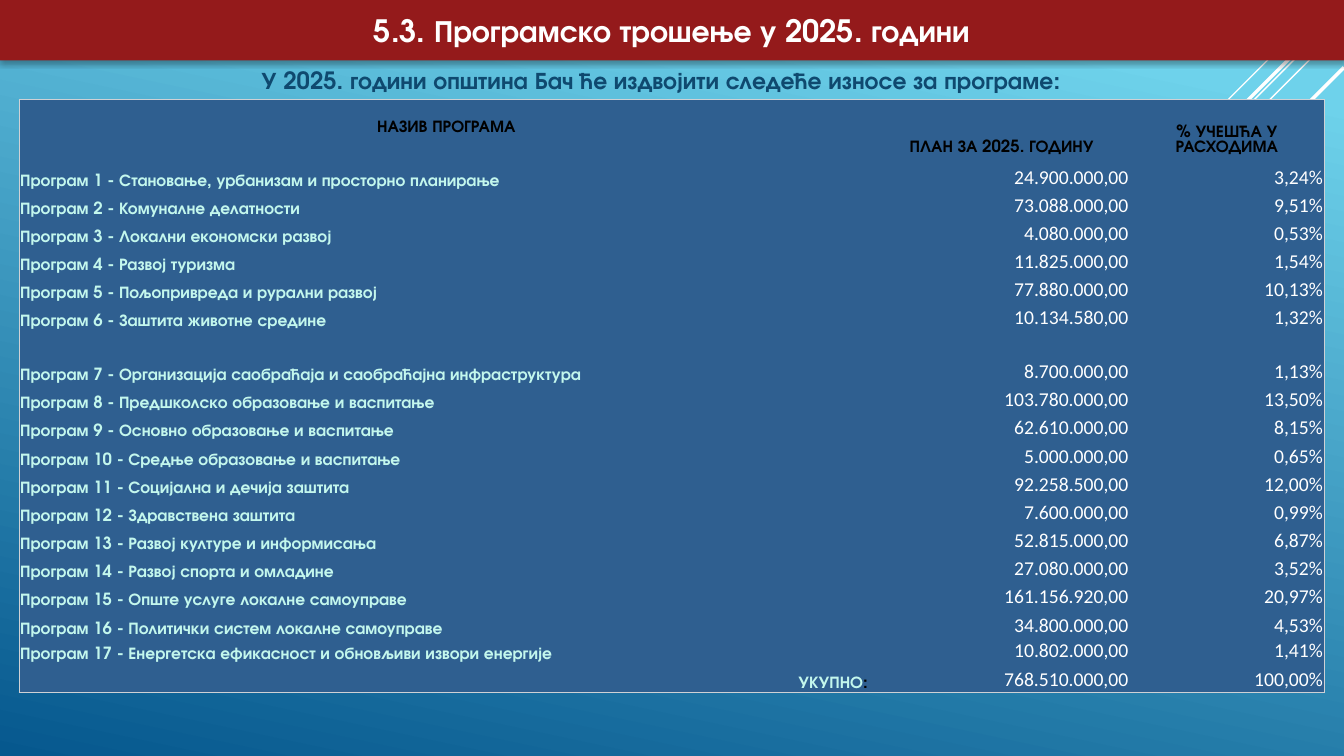
import pptx
import pptx.util
import pptx.dml.color
import pptx.enum.dml
import pptx.enum.shapes
import pptx.enum.text
import pptx.oxml
from pptx.oxml.ns import nsdecls, qn

Cm = pptx.util.Cm
Pt = pptx.util.Pt
ALIGN = pptx.enum.text.PP_ALIGN
ANCHOR = pptx.enum.text.MSO_ANCHOR

COLORS = {
    "sky": "6ED2EB", "sea": "06588E", "white": "FFFFFF", "black": "000000",
    "banner": "941A1B", "subtitle": "0F496F", "table": "2F5F90",
    "mint": "C3F7ED", "border": "CFD1D5",
}
HEAD_FONT = "TeX Gyre Adventor"
FORMATS = {
    "title": {"size": Pt(22), "name": HEAD_FONT, "bold": True, "color": "white"},
    "subtitle": {"size": Pt(17), "name": HEAD_FONT, "bold": True, "color": "subtitle"},
    "header": {"size": Pt(12), "name": HEAD_FONT, "bold": True, "color": "black"},
    "program": {"size": Pt(12), "name": HEAD_FONT, "bold": True, "color": "mint"},
    "value": {"size": Pt(14), "name": "Calibri", "bold": False, "color": "white"},
}
HEADERS = ["НАЗИВ ПРОГРАМА", "ПЛАН ЗА 2025. ГОДИНУ", "% УЧЕШЋА У РАСХОДИМА"]
PROGRAMS = [
    ("Становање, урбанизам и просторно планирање", "24.900.000,00", "3,24%"),
    ("Комуналне делатности", "73.088.000,00", "9,51%"),
    ("Локални економски развој", "4.080.000,00", "0,53%"),
    ("Развој туризма", "11.825.000,00", "1,54%"),
    ("Пољопривреда и рурални развој", "77.880.000,00", "10,13%"),
    ("Заштита животне средине", "10.134.580,00", "1,32%"),
    ("Организација саобраћаја и саобраћајна инфраструктура", "8.700.000,00", "1,13%"),
    ("Предшколско образовање и васпитање", "103.780.000,00", "13,50%"),
    ("Основно образовање и васпитање", "62.610.000,00", "8,15%"),
    ("Средње образовање и васпитање", "5.000.000,00", "0,65%"),
    ("Социјална и дечија заштита", "92.258.500,00", "12,00%"),
    ("Здравствена заштита", "7.600.000,00", "0,99%"),
    ("Развој културе и информисања", "52.815.000,00", "6,87%"),
    ("Развој спорта и омладине", "27.080.000,00", "3,52%"),
    ("Опште услуге локалне самоуправе", "161.156.920,00", "20,97%"),
    ("Политички систем локалне самоуправе", "34.800.000,00", "4,53%"),
    ("Енергетска ефикасност и обновљиви извори енергије", "10.802.000,00", "1,41%"),
]
TOTAL = ("УКУПНО", "768.510.000,00", "100,00%")
COL_WIDTHS = [21.54, 6.45, 4.9]
ROW_HEIGHTS = [1.42, 0.84] + [0.71] * 5 + [1.35] + [0.71] * 9 + [0.64, 0.74]
STREAKS = [(33.43, 0.03, 10.57, 1), (33.87, 0.25, 16.89, 1), (33.87, 0.64, 13.77, 1),
           (33.87, 0.1, 13.49, 2.5), (33.87, 1.7, 12.07, 2.5)]


def rgb(name):
    return pptx.dml.color.RGBColor.from_string(COLORS[name])


def add_run(p, text, style, **changes):
    r = p.add_run()
    r.text = text
    for key, value in {**FORMATS[style], **changes}.items():
        if key == "color":
            r.font.color.rgb = rgb(value)
        else:
            setattr(r.font, key, value)


def place(sp, x, y, w, h):
    for key, value in {"left": x, "top": y, "width": w, "height": h}.items():
        setattr(sp, key, Cm(value))


def fill_placeholder(sp, box, text, style, anchor):
    place(sp, *box)
    tf = sp.text_frame
    for key, value in {"word_wrap": True, "vertical_anchor": anchor,
                       "auto_size": pptx.enum.text.MSO_AUTO_SIZE.NONE}.items():
        setattr(tf, key, value)
    p = tf.paragraphs[0]
    for key, value in {"alignment": ALIGN.CENTER, "space_before": Pt(0),
                       "line_spacing": 1.0}.items():
        setattr(p, key, value)
    add_run(p, text, style)


def paint_background(s):
    fill = s.background.fill
    fill.gradient()
    fill.gradient_angle = 258
    for stop, name, position in zip(fill.gradient_stops, ("sky", "sea"), (0.1, 1)):
        stop.color.rgb = rgb(name)
        stop.position = position


def add_streaks(s):
    for x, y, run, width in STREAKS:
        line = s.shapes.add_connector(pptx.enum.shapes.MSO_CONNECTOR.STRAIGHT,
                                      Cm(x), Cm(y), Cm(x - run), Cm(y + run))
        line.line.color.rgb = rgb("white")
        line.line.width = Pt(width)
        line._element.spPr.append(pptx.oxml.parse_xml(f'<a:effectLst {nsdecls("a")}/>'))


def add_banner(s, box):
    sp = s.shapes.title
    s.shapes._spTree.append(sp._element)
    fill_placeholder(sp, box, "5.3. Програмско трошење у 2025. години", "title", ANCHOR.MIDDLE)
    spPr = sp._element.spPr
    spPr.append(pptx.oxml.parse_xml(
        f'<a:prstGeom {nsdecls("a")} prst="roundRect"><a:avLst/></a:prstGeom>'))
    sp.fill.solid()
    sp.fill.fore_color.rgb = rgb("banner")
    spPr.append(pptx.oxml.parse_xml(
        f'<a:effectLst {nsdecls("a")}><a:outerShdw blurRad="{Pt(3.5)}" dist="{Pt(2.2)}" '
        f'dir="5400000" rotWithShape="0"><a:srgbClr val="{COLORS["black"]}">'
        '<a:alpha val="32000"/></a:srgbClr></a:outerShdw></a:effectLst>'))


def add_subtitle(s, box):
    sp = s.placeholders[1]
    s.shapes._spTree.append(sp._element)
    fill_placeholder(sp, box, "У 2025. години општина Бач ће издвојити следеће износе за програме:",
                     "subtitle", ANCHOR.TOP)


def set_borders(cell, outer):
    tcPr = cell._tc.get_or_add_tcPr()
    for i, (tag, shown) in enumerate(zip(("lnL", "lnR", "lnT", "lnB"), outer)):
        paint = (f'<a:solidFill><a:srgbClr val="{COLORS["border"]}"><a:alpha val="60000"/>'
                 '</a:srgbClr></a:solidFill>') if shown else '<a:noFill/>'
        tcPr.insert(i, pptx.oxml.parse_xml(
            f'<a:{tag} {nsdecls("a")} w="{Pt(0.75)}">{paint}</a:{tag}>'))


def format_cell(cell, anchor, align):
    for key, value in {"margin_left": Cm(0.03), "margin_right": Cm(0.03),
                       "margin_top": Cm(0.03), "margin_bottom": 0,
                       "vertical_anchor": anchor}.items():
        setattr(cell, key, value)
    cell.fill.solid()
    cell.fill.fore_color.rgb = rgb("table")
    p = cell.text_frame.paragraphs[0]
    p.alignment = align
    return p


def add_program_table(s, x, y):
    rows = [HEADERS]
    rows += [(f"Програм {n} - {name}", plan, share)
             for n, (name, plan, share) in enumerate(PROGRAMS, 1)]
    rows.append(TOTAL)
    last_row, last_col = len(rows) - 1, len(HEADERS) - 1
    table = s.shapes.add_table(len(rows), len(HEADERS), Cm(x), Cm(y),
                               Cm(sum(COL_WIDTHS)), Cm(sum(ROW_HEIGHTS))).table
    table.first_row = table.horz_banding = False
    for col, width in zip(table.columns, COL_WIDTHS):
        col.width = Cm(width)
    for i, (row, height) in enumerate(zip(rows, ROW_HEIGHTS)):
        table.rows[i].height = Cm(height)
        for j, text in enumerate(row):
            cell = table.cell(i, j)
            if i == 0:
                style, align = "header", ALIGN.CENTER
            elif j == 0:
                style, align = "program", ALIGN.RIGHT if i == last_row else ALIGN.LEFT
            else:
                style, align = "value", ALIGN.RIGHT
            anchor = ANCHOR.MIDDLE if i == j == 0 else ANCHOR.BOTTOM
            p = format_cell(cell, anchor, align)
            add_run(p, text, style)
            if i == last_row and j == 0:
                add_run(p, ": ", style, color="black")
            set_borders(cell, (j == 0, j == last_col, i == 0, i == last_row))


def main():
    prs = pptx.Presentation()
    prs.slide_width, prs.slide_height = Cm(33.87), Cm(19.05)
    s = prs.slides.add_slide(prs.slide_layouts[0])
    paint_background(s)
    add_streaks(s)
    add_subtitle(s, (4.27, 1.52, 24.77, 1.4))
    add_banner(s, (0, 0, 33.87, 1.52))
    add_program_table(s, 0.48, 2.51)
    prs.save("out.pptx")


if __name__ == "__main__":
    main()
